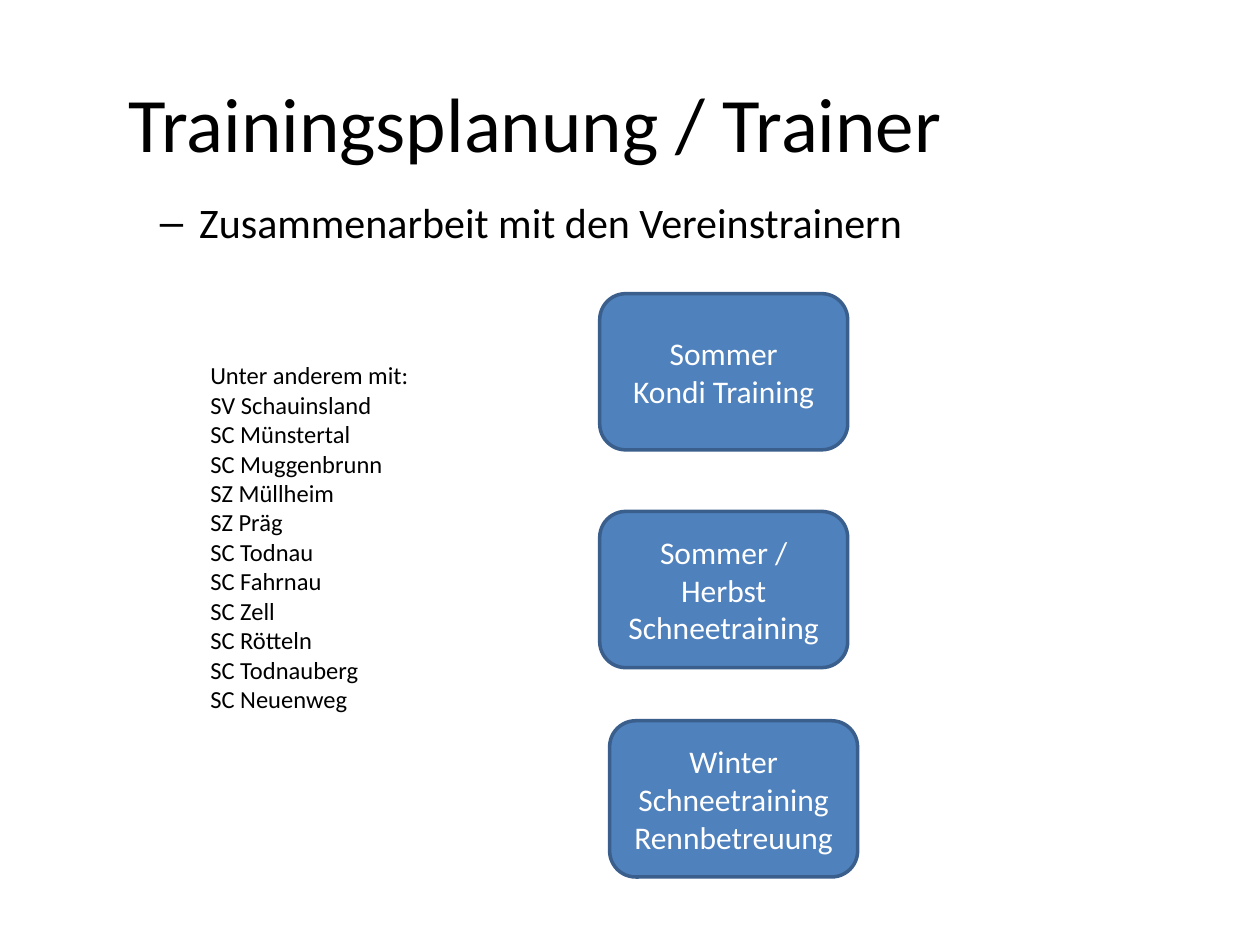
import dataclasses

import lxml.etree
import pptx
import pptx.dml.color
import pptx.enum.shapes
import pptx.enum.text
import pptx.oxml.ns
import pptx.presentation
import pptx.shapes.base
import pptx.slide
import pptx.text.text
import pptx.util
from pptx.util import Cm


@dataclasses.dataclass(frozen=True)
class Theme:
    font: str = "Calibri"
    text: str = "000000"
    box_text: str = "FFFFFF"
    box_fill: str = "4F81BD"
    box_line: str = "3A5F8C"
    title_size: int = 44
    body_size: int = 24
    box_size: int = 18
    list_size: int = 14


@dataclasses.dataclass(frozen=True)
class Frame:
    """Position and size in centimetres."""
    left: float
    top: float
    width: float
    height: float


@dataclasses.dataclass(frozen=True)
class SeasonBox:
    left: float
    top: float
    lines: tuple[str, ...]


THEME = Theme()
BOX_WIDTH, BOX_HEIGHT = 5.0, 3.15

SEASON_BOXES = (
    SeasonBox(12.09, 5.92, ("Sommer", "Kondi Training")),
    SeasonBox(12.09, 10.31, ("Sommer / Herbst Schneetraining",)),
    SeasonBox(12.29, 14.53, ("Winter", "Schneetraining", "Rennbetreuung")),
)

CLUB_LINES = (
    "Unter anderem mit:", "SV Schauinsland", "SC Münstertal", "SC Muggenbrunn",
    "SZ Müllheim", "SZ Präg", "SC Todnau", "SC Fahrnau", "SC Zell",
    "SC Rötteln", "SC Todnauberg", "SC Neuenweg",
)


def color(value: str) -> pptx.dml.color.RGBColor:
    return pptx.dml.color.RGBColor.from_string(value)


def place(shape: pptx.shapes.base.BaseShape, frame: Frame) -> None:
    shape.left, shape.top = Cm(frame.left), Cm(frame.top)
    shape.width, shape.height = Cm(frame.width), Cm(frame.height)


def write_lines(
    text_frame: pptx.text.text.TextFrame,
    lines: tuple[str, ...],
    size: int,
    text_color: str,
    alignment: pptx.enum.text.PP_ALIGN = pptx.enum.text.PP_ALIGN.LEFT,
    anchor: pptx.enum.text.MSO_ANCHOR = pptx.enum.text.MSO_ANCHOR.TOP,
) -> None:
    text_frame.word_wrap = True
    text_frame.auto_size = pptx.enum.text.MSO_AUTO_SIZE.NONE
    text_frame.vertical_anchor = anchor
    for index, line in enumerate(lines):
        paragraph = text_frame.add_paragraph() if index else text_frame.paragraphs[0]
        paragraph.alignment = alignment
        run = paragraph.add_run()
        run.text = line
        run.font.name = THEME.font
        run.font.size = pptx.util.Pt(size)
        run.font.color.rgb = color(text_color)


def set_dash_bullet(paragraph: pptx.text.text._Paragraph) -> None:
    paragraph.level = 1
    properties = paragraph._p.get_or_add_pPr()
    properties.set("marL", str(Cm(2.06)))
    properties.set("indent", str(-Cm(0.79)))
    bullet = lxml.etree.SubElement(properties, pptx.oxml.ns.qn("a:buChar"))
    bullet.set("char", "–")
    paragraph.space_before = pptx.util.Pt(0)


def add_season_box(slide: pptx.slide.Slide, box: SeasonBox) -> None:
    shape = slide.shapes.add_shape(
        pptx.enum.shapes.MSO_SHAPE.ROUNDED_RECTANGLE,
        Cm(box.left), Cm(box.top), Cm(BOX_WIDTH), Cm(BOX_HEIGHT),
    )
    shape.shadow.inherit = False
    shape.fill.solid()
    shape.fill.fore_color.rgb = color(THEME.box_fill)
    shape.line.color.rgb = color(THEME.box_line)
    shape.line.width = pptx.util.Pt(2)
    write_lines(
        shape.text_frame, box.lines, THEME.box_size, THEME.box_text,
        pptx.enum.text.PP_ALIGN.CENTER, pptx.enum.text.MSO_ANCHOR.MIDDLE,
    )


def main() -> None:
    presentation = pptx.Presentation()
    presentation.slide_width, presentation.slide_height = Cm(25.4), Cm(19.05)
    slide = presentation.slides.add_slide(presentation.slide_layouts[1])

    # Title
    title = slide.shapes.title
    place(title, Frame(2.34, 0.86, 22.43, 3.18))
    write_lines(
        title.text_frame, ("Trainingsplanung / Trainer",), THEME.title_size,
        THEME.text, anchor=pptx.enum.text.MSO_ANCHOR.MIDDLE,
    )

    # Main point
    body = slide.placeholders[1]
    place(body, Frame(1.7, 3.84, 22.38, 12.57))
    set_dash_bullet(body.text_frame.paragraphs[0])
    write_lines(
        body.text_frame, ("Zusammenarbeit mit den Vereinstrainern",),
        THEME.body_size, THEME.text,
    )

    # Training through the seasons
    for box in SEASON_BOXES:
        add_season_box(slide, box)

    # Partner clubs
    clubs = slide.shapes.add_textbox(Cm(3.99), Cm(7.14), Cm(5.21), Cm(8.41))
    write_lines(clubs.text_frame, CLUB_LINES, THEME.list_size, THEME.text)

    presentation.save("out.pptx")


if __name__ == "__main__":
    main()
